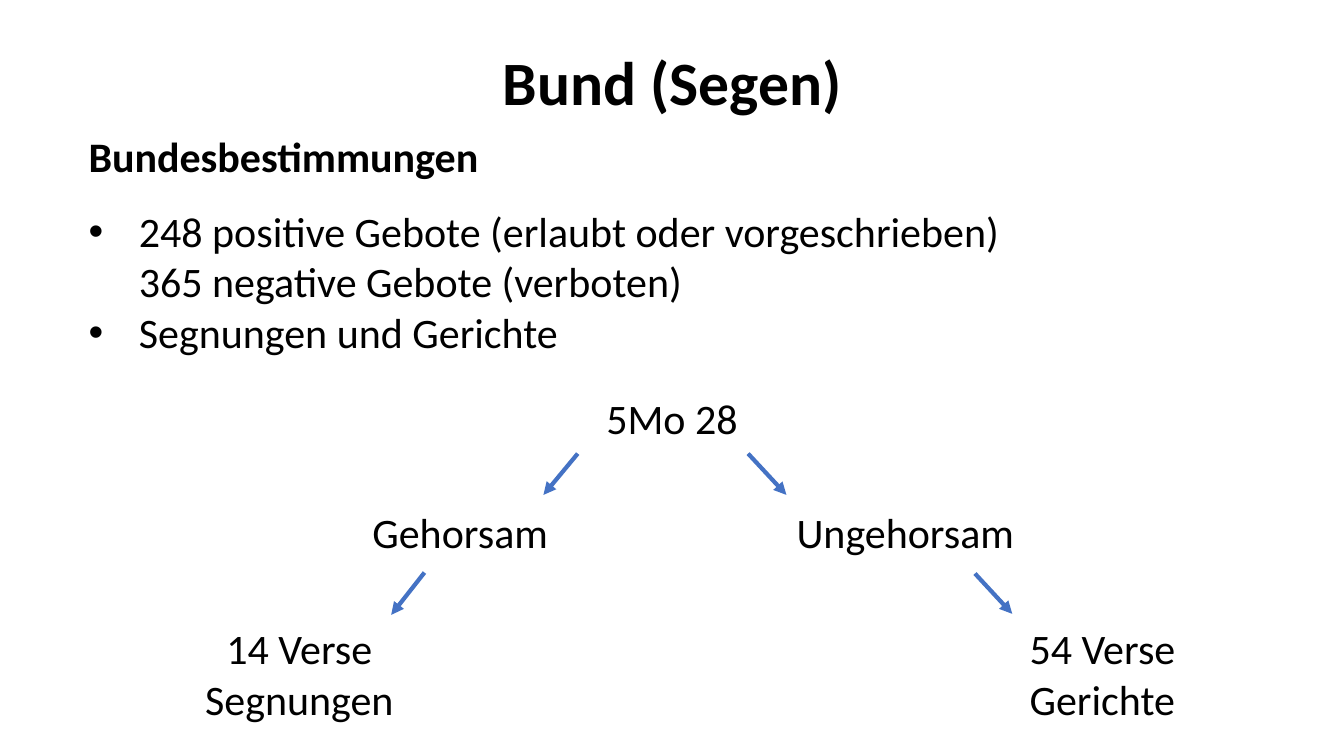
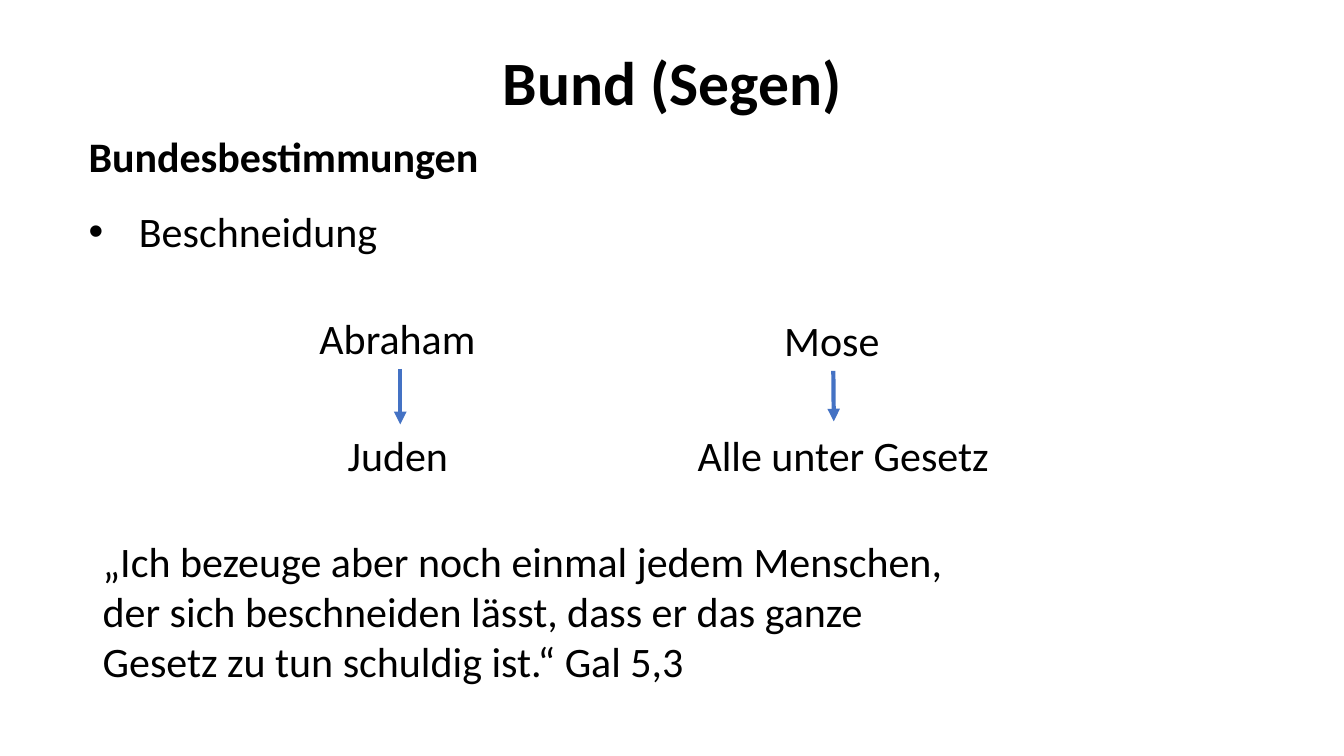
from dataclasses import dataclass

from lxml import etree
from pptx import Presentation
from pptx.dml.color import RGBColor
from pptx.enum.shapes import MSO_CONNECTOR
from pptx.enum.text import MSO_ANCHOR, MSO_AUTO_SIZE, PP_ALIGN
from pptx.oxml.ns import qn
from pptx.shapes.autoshape import Shape
from pptx.shapes.connector import Connector
from pptx.slide import Slide
from pptx.util import Inches, Pt

BLACK = RGBColor(0x00, 0x00, 0x00)
BLUE = RGBColor(0x44, 0x72, 0xC4)
FONT = "Calibri"
LEFT, CENTER = PP_ALIGN.LEFT, PP_ALIGN.CENTER
MIDDLE = MSO_ANCHOR.MIDDLE
GROW = MSO_AUTO_SIZE.SHAPE_TO_FIT_TEXT
STRAIGHT = MSO_CONNECTOR.STRAIGHT
TOP_SIDE, BOTTOM_SIDE = 0, 2
ROW = 0.61
INDENT = 0.5


@dataclass(frozen=True)
class Label:
    text: str
    left: float
    top: float
    width: float
    height: float = ROW
    align: PP_ALIGN = CENTER
    size: int = 30
    bold: bool = False


@dataclass(frozen=True)
class Arrow:
    x1: float
    y1: float
    x2: float
    y2: float


@dataclass(frozen=True)
class Item:
    text: str
    bullet: bool = True


TITLE = Label("Bund (Segen)", 0.92, 0.4, 11.5, 0.89, size=44, bold=True)
HEADING = Label("Bundesbestimmungen", 0.78, 1.25, 4.94, align=LEFT, bold=True)

LAWS = [
    Item("248 positive Gebote (erlaubt oder vorgeschrieben)"),
    Item("365 negative Gebote (verboten)", bullet=False),
    Item("Segnungen und Gerichte"),
]
TREE = [
    Label("5Mo 28", 5.82, 3.84, 1.69),
    Label("Gehorsam", 3.53, 4.98, 2.07),
    Label("Ungehorsam", 7.73, 4.98, 2.5),
    Label("14 Verse Segnungen", 1.5, 6.13, 2.94, 1.11),
    Label("54 Verse Gerichte", 9.9, 6.13, 2.07, 1.11),
]
BRANCHES = [
    Arrow(5.73, 4.5, 5.39, 4.91),
    Arrow(4.21, 5.68, 3.88, 6.1),
    Arrow(7.42, 4.5, 7.8, 4.91),
    Arrow(9.67, 5.69, 10.04, 6.09),
]
ABRAHAM = Label("Abraham", 3.07, 3.05, 1.8, align=LEFT)
JEWS = Label("Juden", 3.35, 4.21, 1.24, align=LEFT)
MOSES = Label("Mose", 7.68, 3.07, 1.17, align=LEFT)
ALL = Label("Alle unter Gesetz", 6.82, 4.21, 3.25, align=LEFT)
QUOTE = Label(
    "„Ich bezeuge aber noch einmal jedem Menschen, der sich beschneiden "
    "lässt, dass er das ganze Gesetz zu tun schuldig ist.“ Gal 5,3",
    0.92, 5.26, 8.68, 1.62, LEFT,
)


def add_label(slide: Slide, label: Label) -> Shape:
    box = slide.shapes.add_textbox(
        Inches(label.left), Inches(label.top), Inches(label.width), Inches(label.height)
    )
    frame = box.text_frame
    frame.word_wrap = True
    frame.text = label.text
    for line in frame.paragraphs:
        line.alignment = label.align
        font = line.runs[0].font
        font.name = FONT
        font.size = Pt(label.size)
        font.bold = label.bold
        font.color.rgb = BLACK
    return box


def add_list(slide: Slide, items: list[Item]) -> None:
    text = "\n".join(item.text for item in items)
    box = add_label(slide, Label(text, 0.78, 1.99, 12.57, ROW + 0.5 * (len(items) - 1), LEFT))
    for line, item in zip(box.text_frame.paragraphs, items):
        props = line._p.get_or_add_pPr()
        props.set("marL", str(Inches(INDENT)))
        if item.bullet:
            props.set("indent", str(-Inches(INDENT)))
            etree.SubElement(props, qn("a:buFont")).set("typeface", "Arial")
            etree.SubElement(props, qn("a:buChar")).set("char", "•")


def add_arrow(slide: Slide, arrow: Arrow) -> Connector:
    line = slide.shapes.add_connector(
        STRAIGHT, Inches(arrow.x1), Inches(arrow.y1), Inches(arrow.x2), Inches(arrow.y2)
    )
    line.line.color.rgb = BLUE
    line.line.width = Pt(3)
    etree.SubElement(line.line._get_or_add_ln(), qn("a:tailEnd")).set("type", "triangle")
    etree.SubElement(line._element.spPr, qn("a:effectLst"))
    return line


def add_page(deck: Presentation, items: list[Item]) -> Slide:
    slide = deck.slides.add_slide(deck.slide_layouts[6])
    frame = add_label(slide, TITLE).text_frame
    frame.vertical_anchor = MIDDLE
    frame.paragraphs[0].line_spacing = 0.9
    add_label(slide, HEADING).text_frame.auto_size = GROW
    add_list(slide, items)
    return slide


def add_laws(deck: Presentation) -> None:
    slide = add_page(deck, LAWS)
    for label in TREE:
        add_label(slide, label)
    for arrow in BRANCHES:
        add_arrow(slide, arrow)


def add_signs(deck: Presentation) -> None:
    slide = add_page(deck, [Item("Beschneidung")])
    abram, jews, moses, _, _ = [
        add_label(slide, label) for label in (ABRAHAM, JEWS, MOSES, ALL, QUOTE)
    ]
    first = add_arrow(slide, Arrow(3.97, 3.68, 3.97, 4.19))
    first.begin_connect(abram, BOTTOM_SIDE)
    first.end_connect(jews, TOP_SIDE)
    second = add_arrow(slide, Arrow(8.27, 3.66, 8.27, 4.18))
    second.begin_connect(moses, BOTTOM_SIDE)


def main() -> None:
    deck = Presentation()
    deck.slide_width = Inches(13.33)
    deck.slide_height = Inches(7.5)
    add_laws(deck)
    add_signs(deck)
    deck.save("out.pptx")


if __name__ == "__main__":
    main()
